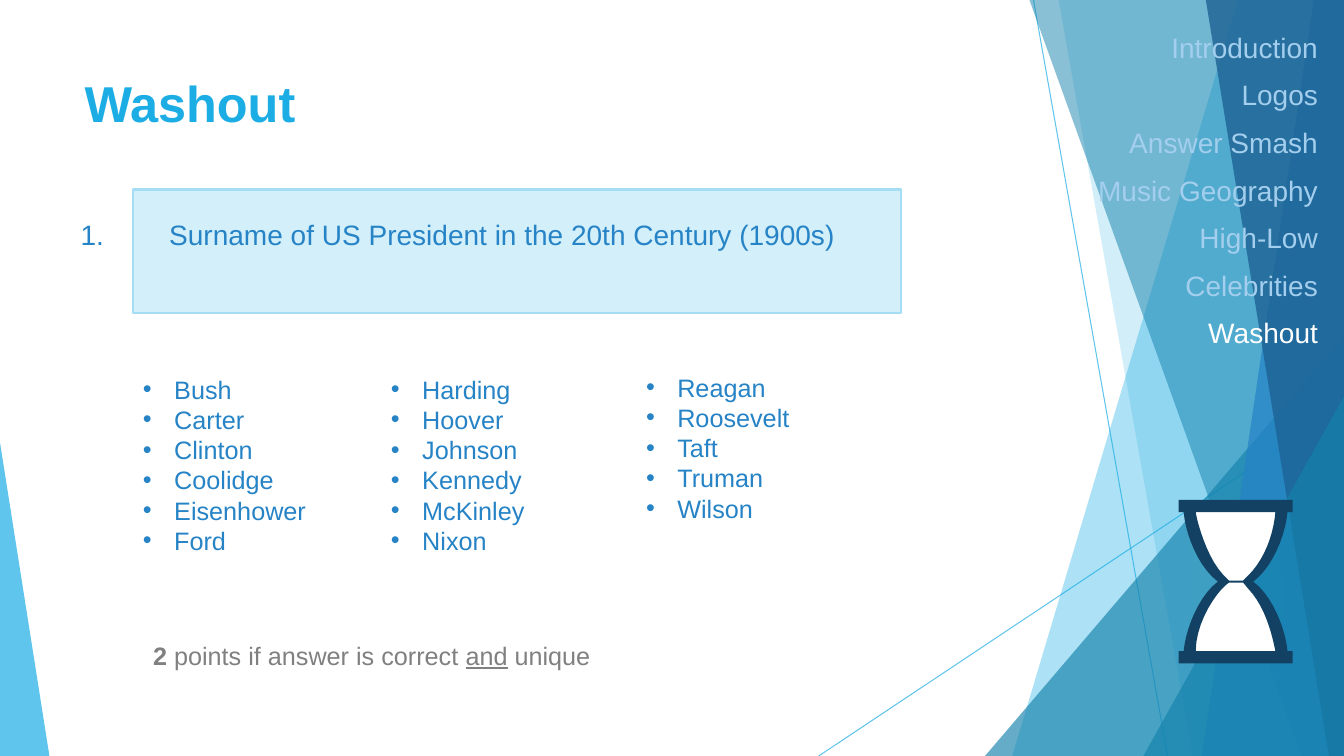
"""Build the Washout quiz slide with its faceted backdrop, answer columns and hourglass."""
from dataclasses import dataclass
from typing import Optional

from lxml import etree
from pptx import Presentation
from pptx import util as u
from pptx.dml.color import RGBColor
from pptx.enum import shapes, text
from pptx.oxml import ns

WIDTH, HEIGHT = 13.33, 7.5
FONT = "Arial"
WHITE = RGBColor(0xFF, 0xFF, 0xFF)
SKY = RGBColor(0x1C, 0xAD, 0xE4)
TEAL = RGBColor(0x14, 0x82, 0xAC)
BLUE = RGBColor(0x26, 0x83, 0xC6)
NAVY = RGBColor(0x1D, 0x62, 0x94)
MENU_BLUE = RGBColor(0xA3, 0xCE, 0xED)
GREY = RGBColor(0x80, 0x80, 0x80)
PANEL = RGBColor(0xD2, 0xEF, 0xFA)
PANEL_EDGE = RGBColor(0xA4, 0xDE, 0xF4)
FRAME = RGBColor(0x13, 0x41, 0x63)
GLASS_LEFT = RGBColor(0x3E, 0x9F, 0xC3)
GLASS_RIGHT = RGBColor(0x1A, 0x84, 0xB3)

Contour = list[tuple[float, ...]]


@dataclass
class Box:
    left: float
    top: float
    width: float
    height: float

    def lengths(self) -> tuple[u.Length, ...]:
        return tuple(u.Inches(v) for v in (self.left, self.top, self.width, self.height))


@dataclass
class Facet:
    top_left: float
    bottom_left: float
    bottom_right: float
    color: RGBColor
    opacity: int


@dataclass
class Triangle:
    box: Box
    apex: float
    color: RGBColor
    opacity: int


@dataclass
class Run:
    content: str
    size: float
    color: RGBColor
    bold: bool = False
    underline: bool = False


@dataclass
class Column:
    box: Box
    names: list[str]


BACKDROP: list[Facet | Triangle] = [
    Facet(12.28, 10.04, WIDTH, SKY, 36),
    Facet(10.5, 11.83, WIDTH, SKY, 20),
    Triangle(Box(9.77, 3.33, 3.56, 4.17), 1, TEAL, 66),
    Facet(10.21, 12.91, WIDTH, TEAL, 50),
    Facet(13.03, 11.92, WIDTH, BLUE, 70),
    Facet(11.96, 13.18, WIDTH, NAVY, 80),
    Triangle(Box(11.34, 3.93, 1.99, 3.57), 1, TEAL, 66),
    Triangle(Box(0, 4.39, 0.49, 3.11), 0, SKY, 70),
]
RAYS = [(10.25, 0, 11.58, HEIGHT), (WIDTH, 4.03, 8.12, HEIGHT)]
COLUMNS = [
    Column(Box(1.32, 3.66, 2.17, 1.92),
           ["Bush", "Carter", "Clinton", "Coolidge", "Eisenhower", "Ford"]),
    Column(Box(3.78, 3.66, 2.57, 2.22),
           ["Harding", "Hoover", "Johnson", "Kennedy", "McKinley", "Nixon"]),
    Column(Box(6.31, 3.64, 2.57, 1.92),
           ["Reagan", "Roosevelt", "Taft", "Truman", "Wilson"]),
]
MENU = ["Introduction", "Logos", "Answer Smash", "Music Geography",
        "High-Low", "Celebrities", "Washout"]
RIGHT_SIDE: Contour = [(12.7, 6.19), (12.74, 6.13), (12.7, 5.51),
                       (12.67, 5.5, 12.67, 5.41, 12.66, 5.36), (12.37, 5.77)]
LEFT_SIDE: Contour = [(11.81, 5.34), (11.77, 5.4), (11.76, 6.18), (11.85, 6.18), (12.14, 5.76)]
HOURGLASS: list[Contour] = [
    [(11.69, 4.96), (12.82, 4.96), (12.82, 5.08), (12.77, 5.08),
     (12.75, 5.31, 12.62, 5.63, 12.43, 5.77), (12.62, 5.91, 12.75, 6.24, 12.77, 6.46),
     (12.82, 6.46), (12.82, 6.58), (11.69, 6.58), (11.69, 6.46), (11.74, 6.46),
     (11.76, 6.24, 11.89, 5.91, 12.08, 5.77), (11.89, 5.63, 11.76, 5.31, 11.74, 5.08),
     (11.69, 5.08)],
    [(11.86, 5.08), (11.87, 5.17, 11.97, 5.53, 12.13, 5.7), (12.19, 5.76), (12.33, 5.76),
     (12.38, 5.71), (12.54, 5.55, 12.63, 5.31, 12.65, 5.08)],
    [(12.19, 5.78), (12.08, 5.85, 11.86, 6.16, 11.86, 6.46), (12.65, 6.46),
     (12.61, 6.26, 12.54, 6.01, 12.38, 5.84), (12.33, 5.78)],
]


def set_opacity(shape, percent: int) -> None:
    for color in shape.element.iter(ns.qn("a:srgbClr")):
        etree.SubElement(color, ns.qn("a:alpha"), val=str(percent * 1000))


def paint(shape, color: RGBColor, opacity: int = 100) -> None:
    shape.shadow.inherit = False
    shape.fill.solid()
    shape.fill.fore_color.rgb = color
    shape.line.fill.background()
    if opacity < 100:
        set_opacity(shape, opacity)


def flatten(contour: Contour, steps: int = 10) -> list[tuple[u.Length, u.Length]]:
    points: list[tuple[float, float]] = []
    for segment in contour:
        if len(segment) == 2:
            points.append((segment[0], segment[1]))
            continue
        controls = [points[-1], segment[:2], segment[2:4], segment[4:]]
        for step in range(1, steps + 1):
            t = step / steps
            weights = ((1 - t) ** 3, 3 * t * (1 - t) ** 2, 3 * t * t * (1 - t), t ** 3)
            points.append((sum(w * c[0] for w, c in zip(weights, controls)),
                           sum(w * c[1] for w, c in zip(weights, controls))))
    return [(u.Inches(x), u.Inches(y)) for x, y in points]


def add_outline(slide, contours: list[Contour], color: RGBColor, opacity: int = 100) -> None:
    first, *others = [flatten(contour) for contour in contours]
    builder = slide.shapes.build_freeform(*first[0])
    builder.add_line_segments(first[1:], close=True)
    for points in others:
        builder.move_to(*points[0])
        builder.add_line_segments(points[1:], close=True)
    paint(builder.convert_to_shape(), color, opacity)


def add_backdrop(slide) -> None:
    for x1, y1, x2, y2 in RAYS:
        ray = slide.shapes.add_connector(shapes.MSO_CONNECTOR.STRAIGHT,
                                         *(u.Inches(v) for v in (x1, y1, x2, y2)))
        ray.line.color.rgb = SKY
        ray.line.width = u.Pt(0.75)
        set_opacity(ray, 70)
        etree.SubElement(ray.element.spPr, ns.qn("a:effectLst"))
    for part in BACKDROP:
        if isinstance(part, Facet):
            corners: Contour = [(part.top_left, 0), (WIDTH, 0), (part.bottom_right, HEIGHT),
                                (part.bottom_left, HEIGHT)]
            if part.bottom_right == WIDTH and part.top_left < part.bottom_left:
                corners[2] = (WIDTH, HEIGHT)
            add_outline(slide, [corners], part.color, part.opacity)
        else:
            shape = slide.shapes.add_shape(shapes.MSO_SHAPE.ISOSCELES_TRIANGLE,
                                           *part.box.lengths())
            shape.adjustments[0] = part.apex
            paint(shape, part.color, part.opacity)


def add_text(slide, box: Box, lines: list[list[Run]], bullet: bool = False, wrap: bool = True,
             align: Optional[text.PP_ALIGN] = None, before: float = 0) -> None:
    frame = slide.shapes.add_textbox(*box.lengths()).text_frame
    frame.word_wrap = wrap
    for index, runs in enumerate(lines):
        paragraph = frame.add_paragraph() if index else frame.paragraphs[0]
        paragraph.alignment = align
        paragraph.space_before = u.Pt(before)
        if bullet:
            properties = paragraph._p.get_or_add_pPr()
            properties.set("marL", str(u.Inches(0.31)))
            properties.set("indent", str(-u.Inches(0.31)))
            etree.SubElement(properties, ns.qn("a:buFont"), typeface=FONT)
            etree.SubElement(properties, ns.qn("a:buChar"), char="•")
        for item in runs:
            run = paragraph.add_run()
            run.text = item.content
            run.font.name, run.font.size = FONT, u.Pt(item.size)
            run.font.bold, run.font.underline = item.bold, item.underline
            run.font.color.rgb = item.color


def add_hourglass(slide) -> None:
    glass = slide.shapes.add_shape(shapes.MSO_SHAPE.RECTANGLE,
                                   *Box(11.86, 5.07, 0.79, 1.39).lengths())
    paint(glass, WHITE)
    add_outline(slide, [RIGHT_SIDE], GLASS_RIGHT)
    add_outline(slide, [LEFT_SIDE], GLASS_LEFT)
    add_outline(slide, HOURGLASS, FRAME)


def main() -> None:
    presentation = Presentation()
    presentation.slide_width, presentation.slide_height = u.Inches(WIDTH), u.Inches(HEIGHT)
    slide = presentation.slides.add_slide(presentation.slide_layouts[6])
    add_backdrop(slide)
    add_text(slide, Box(0.74, 0.67, 9.4, 1.44), [[Run("Washout", 36, SKY, bold=True)]])
    add_text(slide, Box(0.7, 2.11, 0.45, 0.44), [[Run("1.", 20, BLUE)]], wrap=False)
    panel = slide.shapes.add_shape(shapes.MSO_SHAPE.RECTANGLE,
                                   *Box(1.32, 1.88, 7.62, 1.23).lengths())
    paint(panel, PANEL)
    panel.line.color.rgb = PANEL_EDGE
    panel.line.width = u.Pt(1.5)
    add_text(slide, Box(1.58, 2.11, 7.13, 0.44),
             [[Run("Surname of US President in the 20th Century (1900s)", 20, BLUE)]])
    add_text(slide, Box(1.42, 6.3, 6.68, 0.4),
             [[Run("2", 18, GREY, bold=True), Run(" points if answer is correct ", 18, GREY),
               Run("and", 18, GREY, underline=True), Run(" unique", 18, GREY)]])
    add_hourglass(slide)
    for column in COLUMNS:
        add_text(slide, column.box, [[Run(name, 18, BLUE)] for name in column.names], bullet=True)
    add_text(slide, Box(10.56, 0.25, 2.61, 4.52),
             [[Run(name, 20, WHITE if name == MENU[-1] else MENU_BLUE)] for name in MENU],
             align=text.PP_ALIGN.RIGHT, before=10)
    presentation.save("out.pptx")


if __name__ == "__main__":
    main()
